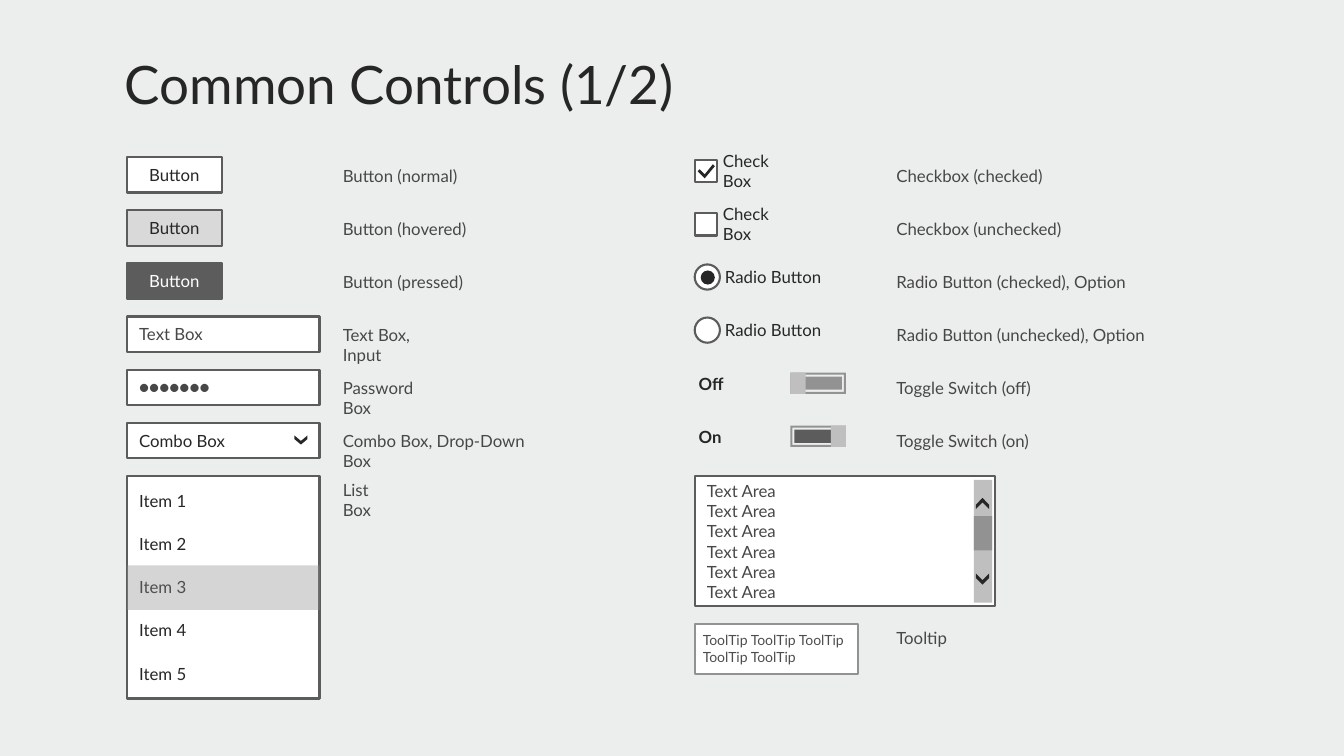
from dataclasses import dataclass

from lxml import etree
from pptx import Presentation
from pptx.dml.color import RGBColor
from pptx.enum.shapes import MSO_SHAPE
from pptx.enum.text import MSO_ANCHOR, PP_ALIGN
from pptx.oxml.ns import qn
from pptx.util import Inches, Pt

RECT, OVAL = MSO_SHAPE.RECTANGLE, MSO_SHAPE.OVAL
TOP, MID = MSO_ANCHOR.TOP, MSO_ANCHOR.MIDDLE
LEFT, CENTER = PP_ALIGN.LEFT, PP_ALIGN.CENTER


@dataclass(frozen=True)
class Theme:
    font: str = "Lato"
    back: str = "ECEEEE"
    white: str = "FFFFFF"
    ink: str = "262626"
    text: str = "474747"
    tip: str = "4D4D4D"
    edge: str = "5C5C5C"
    gray: str = "929292"
    pale: str = "BFBFBF"
    hover: str = "D9D9D9"
    title: float = 37.8
    body: float = 12
    small: float = 10
    line: float = 1.5


T = Theme()

# Column edges, and the rule for the rows
COL_A, NOTE_A, COL_B, NOTE_B = 1.26, 3.36, 6.89, 8.85
ROW_TOP, LIST_TOP, TIP_TOP = 1.56, 4.72, 6.19
PITCH = (LIST_TOP - ROW_TOP) / 6
NOTE_DY, LINE_H = 0.04, 0.27
BREAK = 0.25  # right inset that sends the last word to a second line
FIELD_W, FIELD_H = 1.91, 0.35


def row(num):
    return ROW_TOP + num * PITCH


def paint(shape, fill, line=None):
    shape.shadow.inherit = False
    shape.fill.solid()
    shape.fill.fore_color.rgb = RGBColor.from_string(fill)
    if line:
        shape.line.color.rgb = RGBColor.from_string(line)
        shape.line.width = Pt(T.line)
    else:
        shape.line.fill.background()


def write(shape, text, ink, inset, size=T.body, bold=False, anchor=MID,
          align=LEFT, gap=0):
    frame = shape.text_frame
    frame.word_wrap = True
    frame.vertical_anchor = anchor
    (frame.margin_left, frame.margin_top,
     frame.margin_right, frame.margin_bottom) = map(Inches, inset)
    frame.text = text
    for para in frame.paragraphs:
        para.alignment = align
        para.space_before = para.space_after = Pt(gap)
        for run in para.runs:
            run.font.name = T.font
            run.font.size = Pt(size)
            run.font.bold = bold
            run.font.color.rgb = RGBColor.from_string(ink)


def block(slide, x, y, w, h, fill, line=None, kind=RECT):
    shape = slide.shapes.add_shape(kind, *map(Inches, (x, y, w, h)))
    paint(shape, fill, line)
    return shape


def label(slide, x, y, w, text, ink=T.text, right=0, **style):
    box = slide.shapes.add_textbox(*map(Inches, (x, y, w, LINE_H)))
    write(box, text, ink, (0.04, 0.04, right, 0.04), **style)


def outline(slide, loops, fill):
    """Draw closed loops of points, given in inches."""
    loops = [[(Inches(x), Inches(y)) for x, y in loop] for loop in loops]
    pen = slide.shapes.build_freeform(*loops[0][0])
    for num, loop in enumerate(loops):
        if num:
            pen.move_to(*loop[0])
        pen.add_line_segments(loop[1:], close=True)
    paint(pen.convert_to_shape(), fill)


def arrow(slide, x, y, h, up=False):
    pts = [(0, 0), (0.5, 0.6), (1, 0), (1, 0.4), (0.5, 1), (0, 0.4)]
    outline(slide, [[(x + 0.13 * u, y + h * (1 - v if up else v))
                     for u, v in pts]], T.ink)


def button(slide, num, fill, ink):
    shape = block(slide, COL_A, row(num), 0.94, FIELD_H, fill, T.edge)
    write(shape, "Button", ink, [0.05] * 4, align=CENTER)


def field(slide, num, text, ink=T.text, right=0.12):
    shape = block(slide, COL_A, row(num), FIELD_W, FIELD_H, T.white, T.edge)
    write(shape, text, ink, (0.12, 0.05, right, 0.05))


def items(slide):
    shape = block(slide, COL_A, LIST_TOP, FIELD_W, 2.21, T.white, T.edge)
    text = "\n".join(f"Item {n}" for n in range(1, 6))
    write(shape, text, T.ink, (0.12, 0.15, 0.12, 0.15), gap=8.2)
    mark = block(slide, COL_A, 5.61, FIELD_W, 0.44, T.gray)
    tone = mark.fill._xPr.find(qn("a:solidFill"))[0]
    etree.SubElement(tone, qn("a:alpha")).set("val", "38000")


def check(slide, num, on):
    y = row(num)
    label(slide, 7.13, y, 0.84, "Check Box", T.ink, BREAK, anchor=MID)
    block(slide, COL_B, y + 0.03, 0.22, 0.22, T.white, T.edge)
    if on:
        pts = [(0.05, 0.12), (0.1, 0.17), (0.18, 0.07), (0.2, 0.09),
               (0.1, 0.21), (0.03, 0.14)]
        outline(slide, [[(COL_B + u, y + v) for u, v in pts]], T.ink)


def radio(slide, num, on):
    y = row(num)
    label(slide, 7.15, y, 1.05, "Radio Button", T.ink, anchor=MID)
    block(slide, COL_B, y + 0.01, 0.25, 0.25, T.white, T.edge, OVAL)
    if on:
        block(slide, 6.95, y + 0.07, 0.14, 0.14, T.ink, kind=OVAL)


def toggle(slide, num, on):
    x, y, w, h = 7.84, row(num) + 0.03, 0.55, 0.21
    loops = [[(x + d, y + d), (x + w - d, y + d),
              (x + w - d, y + h - d), (x + d, y + h - d)]
             for d in (0, 0.02)]
    loops[1].reverse()
    outline(slide, loops, T.gray)
    block(slide, x + 0.04, y + 0.04, 0.47, 0.13, T.edge if on else T.gray)
    block(slide, x + 0.4 if on else x, y, 0.15, h, T.pale)
    label(slide, COL_B, row(num), 0.34, "On" if on else "Off", T.ink,
          bold=True, anchor=TOP)


def area(slide):
    shape = block(slide, COL_B, LIST_TOP, 2.98, 1.29, T.white, T.edge)
    write(shape, "\n".join(["Text Area"] * 6), T.text,
          (0.12, 0.05, 0.2, 0.05), anchor=TOP)
    # Scroll bar: track, thumb and two arrows
    block(slide, 9.66, 4.76, 0.18, 1.22, T.pale)
    block(slide, 9.66, 5.12, 0.18, 0.34, T.gray)
    arrow(slide, 9.68, 4.94, 0.11, up=True)
    arrow(slide, 9.68, 5.69, 0.11)


def notes(slide):
    for num, (text, w, right) in enumerate((
            ("Button (normal)", 1.25, 0),
            ("Button (hovered)", 1.33, 0),
            ("Button (pressed)", 1.3, 0),
            ("Text Box, Input", 1.16, BREAK),
            ("Password Box", 1.09, BREAK),
            ("Combo Box, Drop-Down Box", 2.2, BREAK))):
        label(slide, NOTE_A, row(num) + NOTE_DY, w, text, right=right,
              anchor=TOP)
    for num, (text, w) in enumerate((
            ("Checkbox (checked)", 1.55),
            ("Checkbox (unchecked)", 1.74),
            ("Radio Button (checked), Option", 2.4),
            ("Radio Button (unchecked), Option", 2.59),
            ("Toggle Switch (off)", 1.45),
            ("Toggle Switch (on)", 1.44))):
        label(slide, NOTE_B, row(num) + NOTE_DY, w, text, anchor=TOP)
    label(slide, NOTE_A, LIST_TOP, 0.64, "List Box", right=BREAK, anchor=TOP)
    label(slide, NOTE_B, TIP_TOP, 0.58, "Tooltip", anchor=TOP)


def main():
    deck = Presentation()
    deck.slide_width, deck.slide_height = Inches(13.33), Inches(7.5)
    slide = deck.slides.add_slide(deck.slide_layouts[6])
    slide.background.fill.solid()
    slide.background.fill.fore_color.rgb = RGBColor.from_string(T.back)
    head = slide.shapes.add_textbox(*map(Inches, (1.14, 0.44, 11.28, 0.78)))
    write(head, "Common Controls (1/2)", T.ink, (0.1, 0.05, 0.1, 0.05),
          size=T.title)

    # Left column
    for num, (fill, ink) in enumerate((
            (T.white, T.ink), (T.hover, T.ink), (T.edge, T.white))):
        button(slide, num, fill, ink)
    field(slide, 3, "Text Box")
    field(slide, 4, "●●●●●●●")
    field(slide, 5, "Combo Box", T.ink, 0.25)
    arrow(slide, 2.92, 4.32, 0.09)
    items(slide)

    # Right column
    for num, on in enumerate((True, False)):
        check(slide, num, on)
        radio(slide, num + 2, on)
        toggle(slide, num + 4, not on)
    area(slide)
    tip = block(slide, COL_B, TIP_TOP, 1.62, 0.5, T.white, T.gray)
    write(tip, " ".join(["ToolTip"] * 5), T.tip, [0.08] * 4, size=T.small,
          anchor=TOP)

    notes(slide)
    deck.save("out.pptx")


if __name__ == "__main__":
    main()
